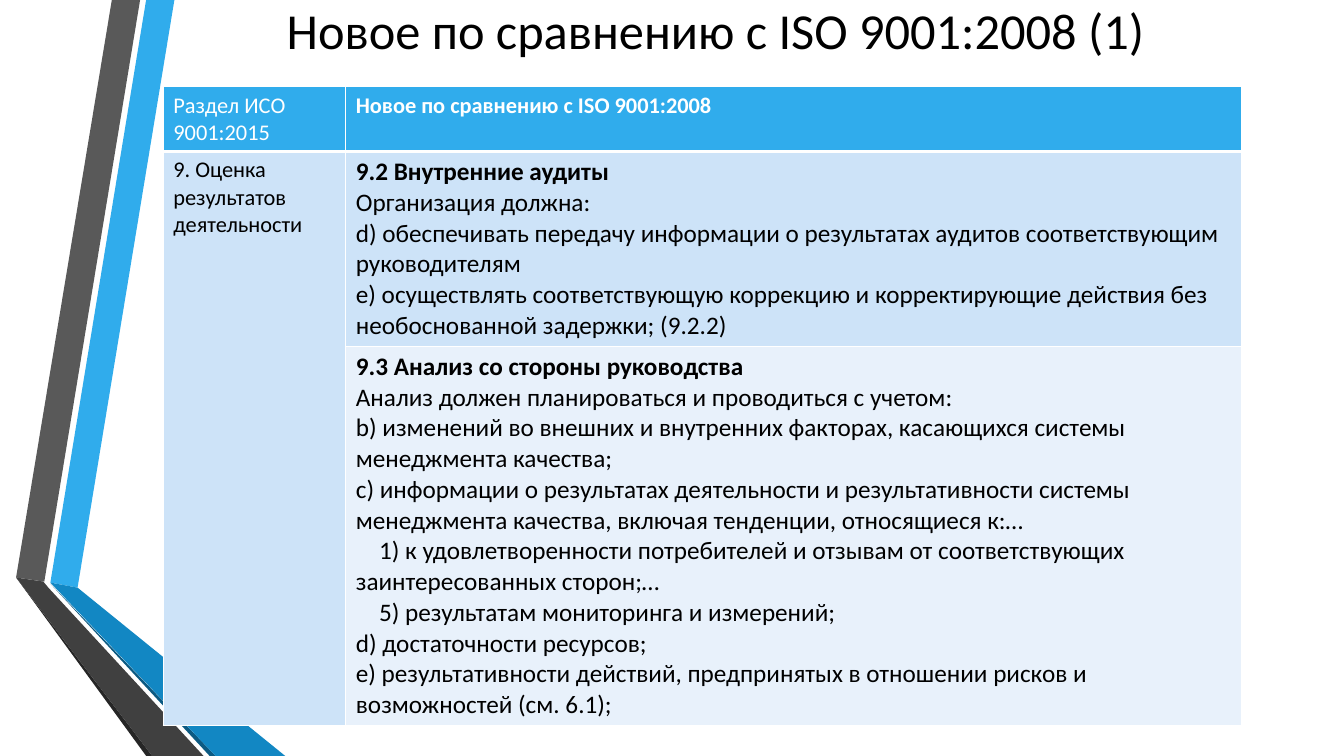
from dataclasses import dataclass

from lxml.etree import SubElement
from pptx import Presentation
from pptx.dml.color import RGBColor
from pptx.enum.text import MSO_ANCHOR, PP_ALIGN
from pptx.oxml.ns import qn
from pptx.util import Inches, Pt


@dataclass(frozen=True)
class Theme:
    font: str = "Calibri"
    white: str = "FFFFFF"
    black: str = "000000"
    sky: str = "30ACEC"
    blue: str = "1287C3"
    navy: str = "0C5A82"
    gray: str = "595959"
    dark: str = "404040"
    coal: str = "262626"
    band: str = "CDE3F8"
    pale: str = "E8F1FB"
    title: int = 36
    body: int = 18
    small: int = 16
    thin: int = 1
    thick: int = 3


class Page:
    def __init__(self, slide, theme):
        self.slide = slide
        self.theme = theme

    def run(self, para, text, size, color, bold=False):
        font = para.add_run().font
        para.runs[-1].text = text
        font.name = self.theme.font
        font.size = Pt(size)
        font.bold = bold
        font.color.rgb = RGBColor.from_string(color)

    def title(self, text, left, top, width, height):
        box = self.slide.shapes.title
        box.left, box.top = Inches(left), Inches(top)
        box.width, box.height = Inches(width), Inches(height)
        frame = box.text_frame
        frame.word_wrap = True
        frame.vertical_anchor = MSO_ANCHOR.MIDDLE
        para = frame.paragraphs[0]
        para.alignment = PP_ALIGN.CENTER
        self.run(para, text, self.theme.title, self.theme.black)

    def ribbon(self, color, points):
        spots = [(Inches(x), Inches(y)) for x, y in points]
        pen = self.slide.shapes.build_freeform(*spots[0])
        pen.add_line_segments(spots[1:], close=True)
        shape = pen.convert_to_shape()
        shape.shadow.inherit = False
        shape.fill.solid()
        shape.fill.fore_color.rgb = RGBColor.from_string(color)
        shape.line.fill.background()

    def table(self, left, top, cols, rows):
        frame = self.slide.shapes.add_table(
            len(rows), len(cols), Inches(left), Inches(top),
            Inches(sum(cols)), Inches(sum(rows)))
        grid = frame.table
        for col, width in zip(grid.columns, cols):
            col.width = Inches(width)
        for row, height in zip(grid.rows, rows):
            row.height = Inches(height)
        return grid

    def border(self, cell, widths):
        props = cell._tc.get_or_add_tcPr()
        for side, width in zip("LRTB", widths):
            line = SubElement(props, qn(f"a:ln{side}"), w=str(Pt(width)))
            fill = SubElement(line, qn("a:solidFill"))
            SubElement(fill, qn("a:srgbClr"), val=self.theme.white)

    def cell(self, cell, fill, lines, size, color, head=False):
        thin, thick = self.theme.thin, self.theme.thick
        self.border(cell, (thin, thin, thin, thick if head else thin))
        cell.fill.solid()
        cell.fill.fore_color.rgb = RGBColor.from_string(fill)
        frame = cell.text_frame
        for i, (text, bold, indent) in enumerate(lines):
            para = frame.add_paragraph() if i else frame.paragraphs[0]
            if indent:
                para._p.get_or_add_pPr().set("indent", str(Inches(indent)))
            self.run(para, text, size, color, bold)


def plain(text, indent=0):
    return text, False, indent


def strong(text):
    return text, True, 0


AUDIT = [
    strong("9.2 Внутренние аудиты"),
    plain("Организация должна:"),
    plain("d) обеспечивать передачу информации о результатах аудитов "
          "соответствующим руководителям"),
    plain("e) осуществлять соответствующую коррекцию и корректирующие "
          "действия без необоснованной задержки; (9.2.2)"),
]
STEP = 0.23
REVIEW = [
    strong("9.3 Анализ со стороны руководства"),
    plain("Анализ должен планироваться и проводиться с учетом:"),
    plain("b) изменений во внешних и внутренних факторах, касающихся "
          "системы менеджмента качества;"),
    plain("с) информации о результатах деятельности и результативности "
          "системы менеджмента качества, включая тенденции, "
          "относящиеся к:…"),
    plain("1) к удовлетворенности потребителей и отзывам от "
          "соответствующих заинтересованных сторон;…", STEP),
    plain("5) результатам мониторинга и измерений;", STEP),
    plain("d) достаточности ресурсов;"),
    plain("e) результативности действий, предпринятых в отношении рисков "
          "и возможностей (см. 6.1);"),
]


def main():
    deck = Presentation()
    deck.slide_width, deck.slide_height = Inches(13.33), Inches(7.5)
    theme = Theme()
    page = Page(deck.slides.add_slide(deck.slide_layouts[5]), theme)

    # Folded ribbons on the left
    ribbons = [
        (theme.sky, [(0.5, 5.78), (0.77, 5.83), (1.73, 0), (1.45, 0)]),
        (theme.gray, [(1.39, 0), (1.11, 0), (0.16, 5.73), (0.44, 5.77)]),
        (theme.coal, [(0.16, 5.73), (1.45, 7.5), (1.51, 7.5)]),
        (theme.navy, [(0.5, 5.79), (2.08, 7.5), (2.14, 7.5)]),
        (theme.blue, [(0.5, 5.78), (2.14, 7.5), (2.83, 7.5), (0.77, 5.83)]),
        (theme.dark, [(2.02, 7.5), (0.48, 5.83), (0.43, 5.77),
                      (0.16, 5.73), (1.51, 7.5)]),
    ]
    for color, points in ribbons:
        page.ribbon(color, points)

    # Title
    page.title("Новое по сравнению с ISO 9001:2008 (1)", 1.62, 0, 10.96, 0.59)

    # Table: the section cell spans both body rows
    grid = page.table(1.62, 0.86, [1.81, 8.88], [0.64, 1.93, 3.75])
    grid.cell(1, 0).merge(grid.cell(2, 0))
    small, body = theme.small, theme.body
    page.cell(grid.cell(0, 0), theme.sky, [plain("Раздел ИСО 9001:2015")],
              small, theme.white, head=True)
    page.cell(grid.cell(0, 1), theme.sky,
              [strong("Новое по сравнению с ISO 9001:2008")],
              small, theme.white, head=True)
    page.cell(grid.cell(1, 0), theme.band,
              [plain("9. Оценка результатов деятельности")],
              small, theme.black)
    page.cell(grid.cell(1, 1), theme.band, AUDIT, body, theme.black)
    page.cell(grid.cell(2, 0), theme.band, [], small, theme.black)
    page.cell(grid.cell(2, 1), theme.pale, REVIEW, body, theme.black)

    deck.save("out.pptx")


if __name__ == "__main__":
    main()
